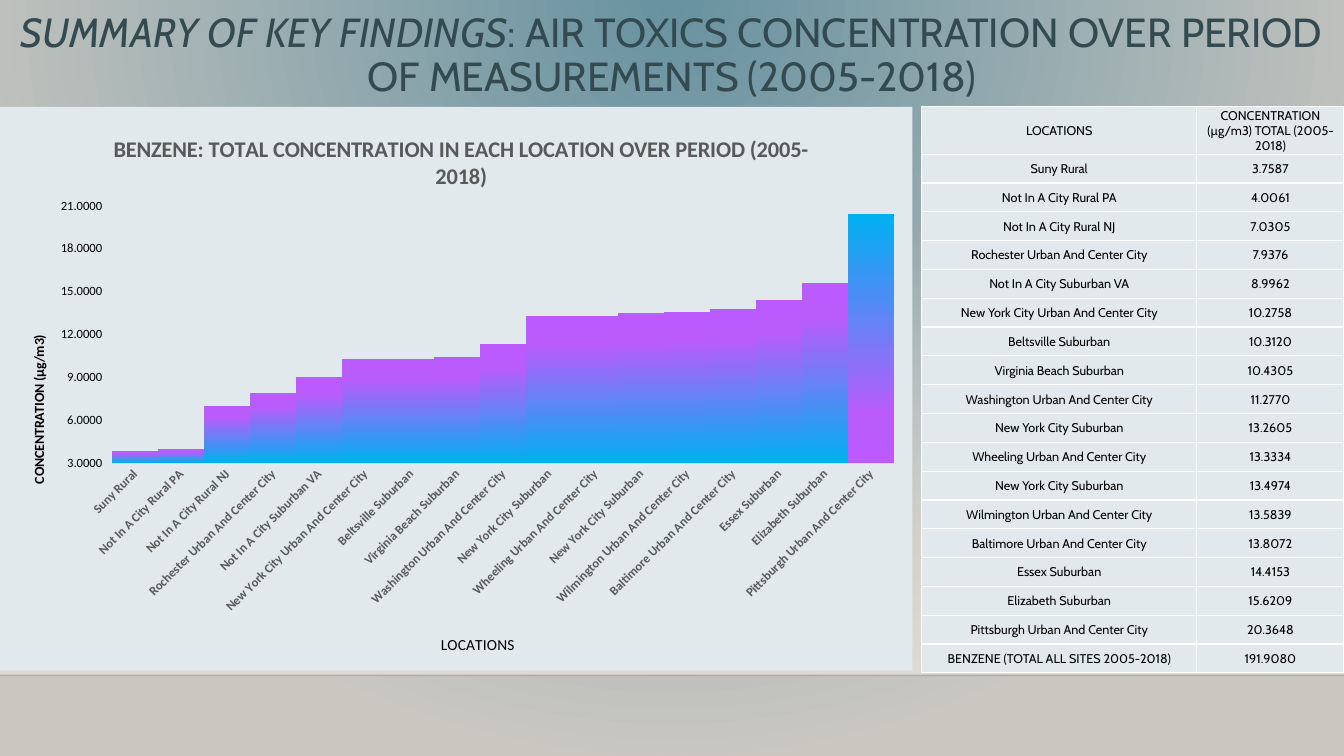
"""Build the slide on benzene concentration by location, 2005-2018."""
import dataclasses
import typing

import pptx
import pptx.chart.data
import pptx.dml.color
import pptx.enum.chart
import pptx.enum.shapes
import pptx.enum.text
import pptx.oxml
import pptx.oxml.ns
import pptx.util

Inches = pptx.util.Inches
Pt = pptx.util.Pt
PANEL, BLACK, GREY = "E1E9EC", "000000", "595959"


@dataclasses.dataclass
class Site:
    name: str
    total: float


@dataclasses.dataclass
class Stop:
    pos: int
    color: str
    alpha: int = 100


@dataclasses.dataclass
class Caption:
    owner: typing.Any
    text: str
    size: int
    bold: bool
    color: str
    x: float
    y: float


SITES = [
    Site("Suny Rural", 3.7587),
    Site("Not In A City Rural PA", 4.0061),
    Site("Not In A City Rural NJ", 7.0305),
    Site("Rochester Urban And Center City", 7.9376),
    Site("Not In A City Suburban VA", 8.9962),
    Site("New York City Urban And Center City", 10.2758),
    Site("Beltsville Suburban", 10.3120),
    Site("Virginia Beach Suburban", 10.4305),
    Site("Washington Urban And Center City", 11.2770),
    Site("New York City Suburban", 13.2605),
    Site("Wheeling Urban And Center City", 13.3334),
    Site("New York City Suburban", 13.4974),
    Site("Wilmington Urban And Center City", 13.5839),
    Site("Baltimore Urban And Center City", 13.8072),
    Site("Essex Suburban", 14.4153),
    Site("Elizabeth Suburban", 15.6209),
    Site("Pittsburgh Urban And Center City", 20.3648),
]
ALL_SITES = Site("BENZENE (TOTAL ALL SITES 2005-2018)", 191.9080)
BAR_STOPS = [Stop(0, "00B0F0"), Stop(80, "B95CFB"), Stop(100, "BB5AFF")]


def rgb(color: str) -> pptx.dml.color.RGBColor:
    return pptx.dml.color.RGBColor.from_string(color)


def xml(tag: str, inner: str = "", attrs: str = ""):
    ns = pptx.oxml.ns.nsdecls("a", "c")
    return pptx.oxml.parse_xml(f"<{tag} {ns} {attrs}>{inner}</{tag}>")


def apply(target: typing.Any, values: dict) -> None:
    for name, value in values.items():
        setattr(target, name, value)


def set_font(font, color: str, **values) -> None:
    apply(font, values)
    font.color.rgb = rgb(color)


def gradient(fill, stops: list[Stop], direction: str) -> None:
    fill.solid()
    inner = "".join(
        f'<a:gs pos="{st.pos * 1000}"><a:srgbClr val="{st.color}">'
        f'<a:alpha val="{st.alpha * 1000}"/></a:srgbClr></a:gs>' for st in stops)
    grad = xml("a:gradFill", f"<a:gsLst>{inner}</a:gsLst>{direction}", 'rotWithShape="1"')
    parent = fill._xPr
    parent.replace(parent.find(pptx.oxml.ns.qn("a:solidFill")), grad)


def linear(angle: int) -> str:
    return f'<a:lin ang="{angle * 60000}" scaled="0"/>'


def place(element, **spots: float) -> None:
    for old in element.findall(pptx.oxml.ns.qn("c:layout")):
        element.remove(old)
    target = '<c:layoutTarget val="inner"/>' if "w" in spots else ""
    modes = '<c:xMode val="edge"/><c:yMode val="edge"/>'
    values = "".join(f'<c:{k} val="{v}"/>' for k, v in spots.items())
    index = 0 if element.find(pptx.oxml.ns.qn("c:tx")) is None else 1
    element.insert(index, xml("c:layout", f"<c:manualLayout>{target}{modes}{values}</c:manualLayout>"))


def add_backdrop(s) -> None:
    gradient(s.background.fill, [Stop(0, "6892A0"), Stop(100, "CAC7C1")],
             '<a:path path="circle"><a:fillToRect l="43000" t="0" r="43000" b="100000"/></a:path>')
    sp = s.shapes.add_shape(pptx.enum.shapes.MSO_SHAPE.RECTANGLE,
                            Inches(0), Inches(2.21), Inches(13.33), Inches(4.49))
    sp.shadow.inherit = False
    sp.line.fill.background()
    gradient(sp.fill, [Stop(0, "DFDBD5", 0), Stop(100, "DFDBD5")], linear(90))
    floor = s.shapes.add_connector(pptx.enum.shapes.MSO_CONNECTOR.STRAIGHT,
                                   Inches(0), Inches(6.7), Inches(13.33), Inches(6.7))
    floor.line.width = Pt(1)
    floor.line.color.rgb = rgb("000001")
    tint = next(floor._element.spPr.iter(pptx.oxml.ns.qn("a:srgbClr")))
    tint.append(xml("a:alpha", attrs='val="20000"'))
    floor._element.spPr.append(xml("a:effectLst"))


def add_title(s) -> None:
    tf = s.shapes.add_textbox(Inches(0), Inches(0.12), Inches(13.33), Inches(0.88)).text_frame
    apply(tf, {"word_wrap": True, "vertical_anchor": pptx.enum.text.MSO_ANCHOR.MIDDLE})
    p = tf.paragraphs[0]
    apply(p, {"alignment": pptx.enum.text.PP_ALIGN.CENTER, "line_spacing": 0.9})
    for text, italic in (
            ("SUMMARY OF KEY FINDINGS", True),
            (": AIR TOXICS CONCENTRATION OVER PERIOD OF MEASUREMENTS (2005-2018)", False)):
        r = p.add_run()
        r.text = text
        set_font(r.font, "334A51", name="Cabin", size=Pt(29), italic=italic)


def add_benzene_chart(s) -> None:
    data = pptx.chart.data.CategoryChartData()
    data.categories = [site.name for site in SITES]
    data.add_series("Series 1", [round(site.total, 1) for site in SITES])
    chart = s.shapes.add_chart(pptx.enum.chart.XL_CHART_TYPE.COLUMN_CLUSTERED,
                               Inches(0), Inches(1.06), Inches(9.05), Inches(5.59), data).chart
    chart.has_legend = False
    set_font(chart.font, BLACK, name="Calibri", size=Pt(10))
    panel = xml("c:spPr", f'<a:solidFill><a:srgbClr val="{PANEL}"/></a:solidFill><a:ln><a:noFill/></a:ln>')
    chart._chartSpace.find(pptx.oxml.ns.qn("c:txPr")).addprevious(panel)

    plot = chart.plots[0]
    apply(plot, {"gap_width": 0, "vary_by_categories": False})
    bars = plot.series[0]
    gradient(bars.format.fill, BAR_STOPS, linear(270))
    gradient(bars.points[len(SITES) - 1].format.fill, BAR_STOPS, linear(90))

    cat, val = chart.category_axis, chart.value_axis
    tick = pptx.enum.chart.XL_TICK_MARK
    apply(cat, {"major_tick_mark": tick.NONE, "has_major_gridlines": False})
    apply(val, {"major_tick_mark": tick.OUTSIDE, "has_major_gridlines": False,
                "minimum_scale": 3, "maximum_scale": 21, "major_unit": 3})
    apply(val.tick_labels, {"number_format": "0.0000", "number_format_is_linked": False})
    set_font(cat.tick_labels.font, GREY, name="Calibri", size=Pt(9), bold=True)
    set_font(val.tick_labels.font, BLACK, name="Calibri", size=Pt(9), bold=False)
    cat._element.txPr.bodyPr.set("rot", "-2700000")
    cat.format.line.width = Pt(1)
    cat.format.line.color.rgb = rgb("D9D9D9")
    val.format.line.fill.background()

    for cap in (
            Caption(chart.chart_title, "BENZENE: TOTAL CONCENTRATION IN EACH LOCATION OVER PERIOD (2005-2018)",
                    16, True, GREY, 0.12, 0.04),
            Caption(cat.axis_title, "LOCATIONS", 11, False, BLACK, 0.48, 0.93),
            Caption(val.axis_title, "CONCENTRATION (µg/m3)", 10, True, BLACK, 0.03, 0.4)):
        p = cap.owner.text_frame.paragraphs[0]
        r = p.add_run()
        r.text = cap.text
        set_font(r.font, cap.color, name="Calibri", size=Pt(cap.size), bold=cap.bold)
        place(cap.owner._element, x=cap.x, y=cap.y)
    place(chart._chartSpace.chart.plotArea, x=0.123, y=0.176, w=0.857, h=0.456)


def fill_cell(cell, text: str) -> None:
    cell.fill.solid()
    cell.fill.fore_color.rgb = rgb(PANEL)
    apply(cell, {"vertical_anchor": pptx.enum.text.MSO_ANCHOR.MIDDLE, "margin_left": Inches(0.01),
                 "margin_right": Inches(0.01), "margin_top": Inches(0.01), "margin_bottom": 0})
    p = cell.text_frame.paragraphs[0]
    p.alignment = pptx.enum.text.PP_ALIGN.CENTER
    r = p.add_run()
    r.text = text
    set_font(r.font, BLACK, name="Cabin", size=Pt(9), bold=False)
    edge = '<a:solidFill><a:srgbClr val="FFFFFF"/></a:solidFill>'
    for i, side in enumerate("LRTB"):
        cell._tc.tcPr.insert(i, xml(f"a:ln{side}", edge, 'w="12700"'))


def add_site_table(s) -> None:
    rows = [("LOCATIONS", "CONCENTRATION (µg/m3) TOTAL (2005-2018)")]
    rows += [(site.name, f"{site.total:.4f}") for site in SITES + [ALL_SITES]]
    header, height = 0.47, 5.62
    table = s.shapes.add_table(len(rows), 2, Inches(9.14), Inches(1.06), Inches(4.19), Inches(height)).table
    apply(table, {"first_row": False, "horz_banding": False})
    for column, width in zip(table.columns, (2.73, 1.46)):
        column.width = Inches(width)
    for i, texts in enumerate(rows):
        table.rows[i].height = Inches((height - header) / (len(rows) - 1) if i else header)
        for j, text in enumerate(texts):
            fill_cell(table.cell(i, j), text)


def main() -> None:
    prs = pptx.Presentation()
    apply(prs, {"slide_width": Inches(13.33), "slide_height": Inches(7.5)})
    s = prs.slides.add_slide(prs.slide_layouts[6])
    for draw in (add_backdrop, add_title, add_benzene_chart, add_site_table):
        draw(s)
    prs.save("out.pptx")


if __name__ == "__main__":
    main()
